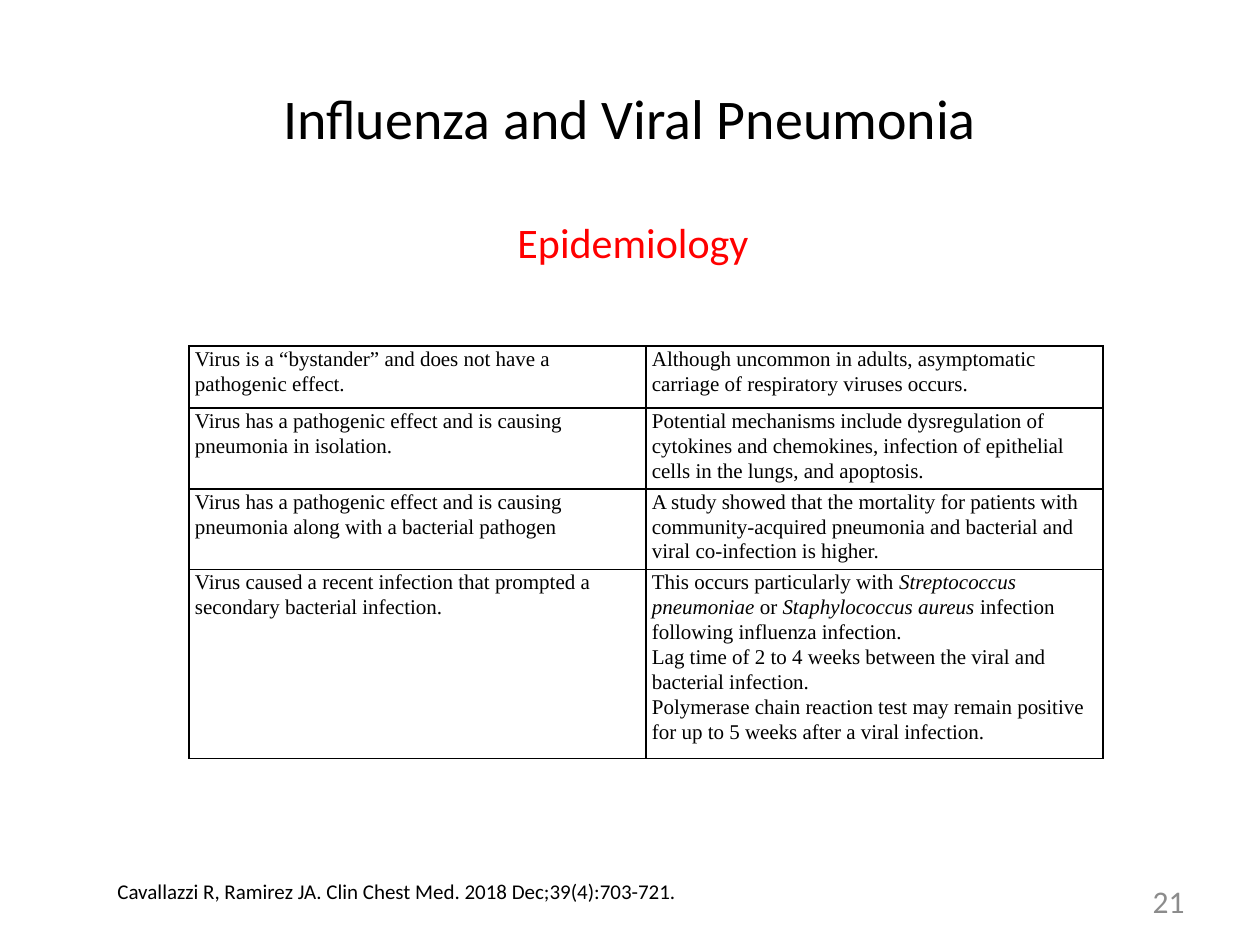
"""Build the slide on the epidemiology of influenza and viral pneumonia."""
from lxml.etree import SubElement
from pptx import Presentation
from pptx.dml.color import RGBColor
from pptx.enum.text import MSO_ANCHOR, MSO_AUTO_SIZE, PP_ALIGN
from pptx.oxml.ns import qn
from pptx.util import Emu, Pt

COLORS = {"black": "000000", "red": "FF0000", "gray": "8C8C8C"}
ROWS = [
    ("Virus is a “bystander” and does not have a pathogenic effect.",
     "Although uncommon in adults, asymptomatic carriage of respiratory viruses occurs."),
    ("Virus has a pathogenic effect and is causing pneumonia in isolation.",
     "Potential mechanisms include dysregulation of cytokines and chemokines, "
     "infection of epithelial cells in the lungs, and apoptosis."),
    ("Virus has a pathogenic effect and is causing pneumonia along with a bacterial pathogen",
     "A study showed that the mortality for patients with community-acquired pneumonia "
     "and bacterial and viral co-infection is higher."),
    ("Virus caused a recent infection that prompted a secondary bacterial infection.",
     "This occurs particularly with *Streptococcus pneumoniae* or *Staphylococcus aureus* "
     "infection following influenza infection.\n"
     "Lag time of 2 to 4 weeks between the viral and bacterial infection.\n"
     "Polymerase chain reaction test may remain positive for up to 5 weeks "
     "after a viral infection."),
]
HEIGHTS = [62, 62, 62, 154]
TEXTS = [
    ("Influenza and Viral Pneumonia", (63, 38, 1134, 158), 32, "black",
     PP_ALIGN.CENTER, MSO_ANCHOR.MIDDLE, True),
    ("Epidemiology", (504, 210, 258, 63), 24, "red",
     PP_ALIGN.CENTER, MSO_ANCHOR.TOP, False),
    ("Cavallazzi R, Ramirez JA. Clin Chest Med. 2018 Dec;39(4):703-721.",
     (105, 872, 591, 38), 12, "black", PP_ALIGN.LEFT, MSO_ANCHOR.TOP, False),
    ("21", (903, 876, 294, 50), 18, "gray",
     PP_ALIGN.RIGHT, MSO_ANCHOR.MIDDLE, True),
]


def px(n):
    return Emu(round(n * 914400 / 126))


def style(r, font, size, color):
    r.font.name = font
    r.font.size = Pt(size)
    r.font.color.rgb = RGBColor.from_string(COLORS[color])


prs = Presentation()
prs.slide_width, prs.slide_height = px(1260), px(945)
s = prs.slides.add_slide(prs.slide_layouts[6])

for text, box, size, color, align, anchor, wrap in TEXTS:
    sp = s.shapes.add_textbox(*map(px, box))
    tf = sp.text_frame
    tf.text = text
    tf.word_wrap = wrap
    tf.auto_size = MSO_AUTO_SIZE.NONE if wrap else MSO_AUTO_SIZE.SHAPE_TO_FIT_TEXT
    tf.vertical_anchor = anchor
    p = tf.paragraphs[0]
    p.alignment = align
    style(p.runs[0], "Calibri", size, color)

sp = s.shapes.add_table(len(ROWS), 2, px(189), px(346), px(914), px(412))
table = sp.table
table.first_row = table.horz_banding = False
for row, height in zip(table.rows, HEIGHTS):
    row.height = px(height)
sp.height = px(412)

for row, texts in zip(table.rows, ROWS):
    for cell, text in zip(row.cells, texts):
        cell.margin_left = cell.margin_right = px(6)
        cell.margin_top = cell.margin_bottom = 0
        tcPr = cell._tc.get_or_add_tcPr()
        for side in ("lnL", "lnR", "lnT", "lnB"):
            ln = SubElement(tcPr, qn(f"a:{side}"), w=str(Pt(1)))
            fill = SubElement(ln, qn("a:solidFill"))
            SubElement(fill, qn("a:srgbClr"), val=COLORS["black"])
        cell.fill.background()
        tf = cell.text_frame
        tf.text = text
        for p in tf.paragraphs:
            p.line_spacing = 1.07
            parts = p.text.split("*")
            p.text = ""
            for i, part in enumerate(parts):
                r = p.add_run()
                r.text = part
                style(r, "Times New Roman", 12, "black")
                r.font.italic = i % 2 == 1

prs.save("out.pptx")
